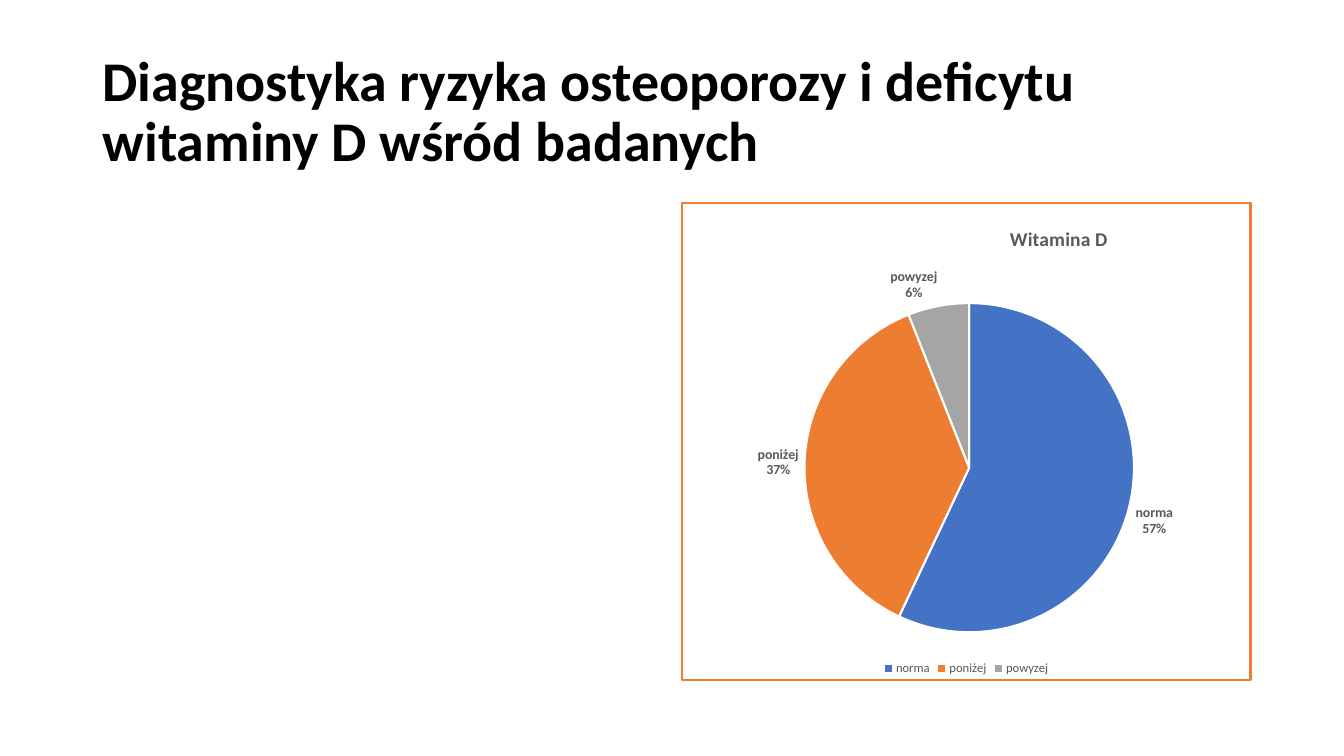
from lxml import etree
from pptx import Presentation
from pptx.chart.data import CategoryChartData
from pptx.dml.color import RGBColor
from pptx.enum.chart import XL_CHART_TYPE, XL_LABEL_POSITION, XL_LEGEND_POSITION
from pptx.enum.text import MSO_ANCHOR
from pptx.oxml import parse_xml
from pptx.oxml.ns import nsdecls, qn
from pptx.util import Inches, Pt

PIE = XL_CHART_TYPE.PIE
OUTSIDE = XL_LABEL_POSITION.OUTSIDE_END
BOTTOM = XL_LEGEND_POSITION.BOTTOM
MIDDLE = MSO_ANCHOR.MIDDLE

FONT = "Calibri"
COLORS = {"black": "000000", "white": "FFFFFF", "gray": "595959",
          "norm": "4472C4", "below": "ED7D31", "above": "A5A5A5"}
# Category, share, slice colour
SHARES = [("norma", 57, "norm"), ("poniżej", 37, "below"), ("powyzej", 6, "above")]


def color(name):
    return RGBColor.from_string(COLORS[name])


def set_font(font, size, name, bold=False):
    font.name = FONT
    font.size = Pt(size)
    font.bold = bold
    font.color.rgb = color(name)


def add_title(slide, text, left, top, width, height):
    box = slide.shapes.add_textbox(Inches(left), Inches(top), Inches(width), Inches(height))
    frame = box.text_frame
    frame.word_wrap = True
    frame.vertical_anchor = MIDDLE
    para = frame.paragraphs[0]
    para.text = text
    para.line_spacing = 0.9
    set_font(para.font, 40, "black", True)


def set_layout(parent, index, **parts):
    """Place a chart part by fractions of the chart's size."""
    for old in parent.findall(qn("c:layout")):
        parent.remove(old)
    layout = parse_xml(f'<c:layout {nsdecls("c")}><c:manualLayout/></c:layout>')
    for tag, value in parts.items():
        etree.SubElement(layout[0], qn(f"c:{tag}")).set("val", str(value))
    parent.insert(index, layout)


def set_frame(space, fill, line, width):
    """Give the chart area a fill and a border."""
    frame = parse_xml(
        f'<c:spPr {nsdecls("c", "a")}>'
        f'<a:solidFill><a:srgbClr val="{COLORS[fill]}"/></a:solidFill>'
        f'<a:ln w="{Pt(width)}"><a:solidFill><a:srgbClr val="{COLORS[line]}"/>'
        '</a:solidFill></a:ln></c:spPr>')
    space.find(qn("c:chart")).addnext(frame)


def add_pie(slide, title, left, top, width, height):
    data = CategoryChartData()
    data.categories = [name for name, _, _ in SHARES]
    data.add_series("Series 1", [share for _, share, _ in SHARES])
    chart = slide.shapes.add_chart(
        PIE, Inches(left), Inches(top), Inches(width), Inches(height), data).chart
    set_font(chart.font, 10, "black")

    # Heading and legend
    chart.has_title = True
    head = chart.chart_title.text_frame.paragraphs[0]
    head.text = title
    set_font(head.font, 14, "gray", True)
    chart.has_legend = True
    chart.legend.position = BOTTOM
    chart.legend.include_in_layout = False
    set_font(chart.legend.font, 9, "gray")

    # Slices
    plot = chart.plots[0]
    plot.vary_by_categories = True
    for index, (_, _, name) in enumerate(SHARES):
        style = plot.series[0].points[index].format
        style.fill.solid()
        style.fill.fore_color.rgb = color(name)
        style.line.color.rgb = color("white")
        style.line.width = Pt(1.5)

    # Labels
    plot.has_data_labels = True
    labels = plot.data_labels
    labels.show_percentage = True
    labels.show_category_name = True
    labels.show_value = False
    labels.number_format = "0%"
    labels.number_format_is_linked = False
    labels.position = OUTSIDE
    set_font(labels.font, 10, "gray", True)

    # Placement and border
    space = chart._chartSpace
    body = space.find(qn("c:chart"))
    set_layout(body.find(qn("c:title")), 1, xMode="edge", yMode="edge", x=0.57, y=0.04)
    set_layout(body.find(qn("c:plotArea")), 0, layoutTarget="inner",
               xMode="edge", yMode="edge", x=0.215, y=0.21, w=0.58, h=0.69)
    set_frame(space, "white", "below", 2)


def main():
    deck = Presentation()
    deck.slide_width = Inches(13.33)
    deck.slide_height = Inches(7.5)
    slide = deck.slides.add_slide(deck.slide_layouts[6])
    add_title(slide, "Diagnostyka ryzyka osteoporozy i deficytu witaminy D wśród badanych",
              0.92, 0.4, 11.5, 1.45)
    add_pie(slide, "Witamina D", 6.75, 2, 5.67, 4.76)
    deck.save("out.pptx")


if __name__ == "__main__":
    main()
